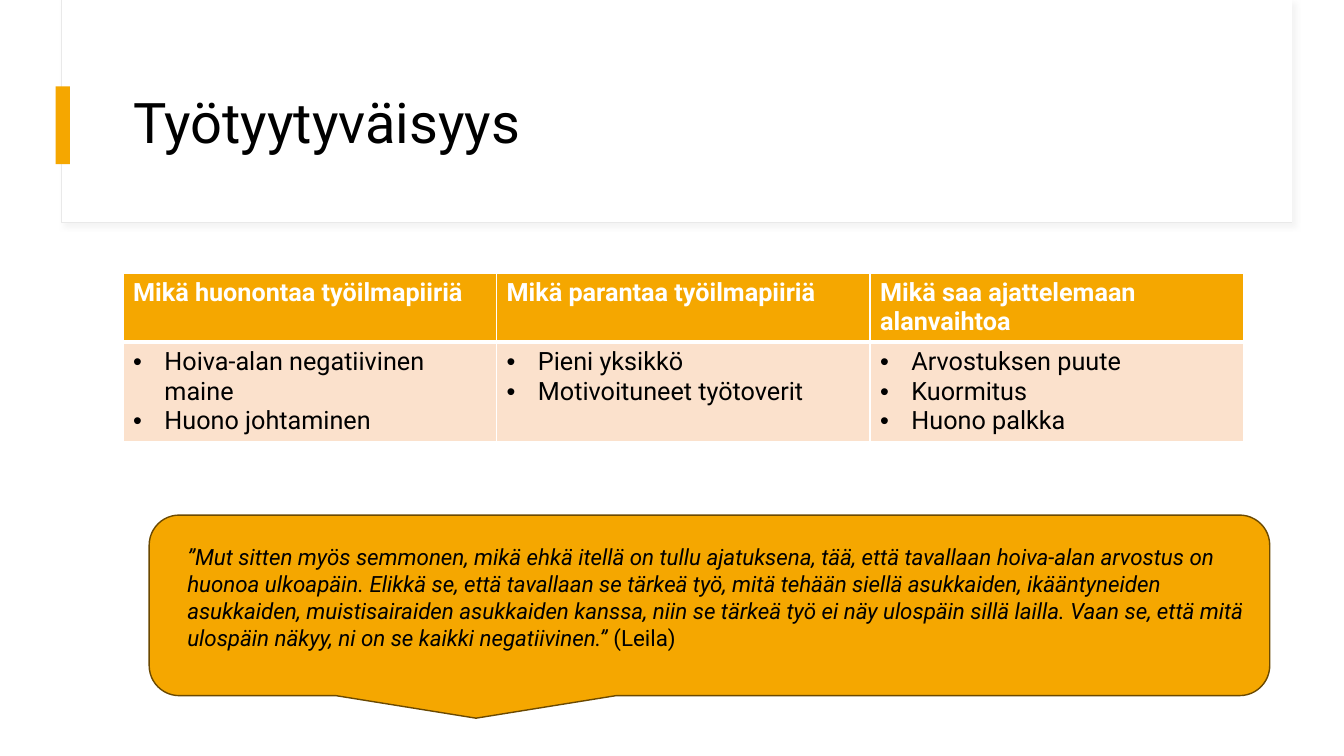
from lxml.etree import SubElement
from pptx import Presentation
from pptx.dml.color import RGBColor
from pptx.enum.shapes import MSO_SHAPE
from pptx.enum.text import MSO_ANCHOR, MSO_AUTO_SIZE, PP_ALIGN
from pptx.oxml import parse_xml
from pptx.oxml.ns import nsdecls, qn
from pptx.util import Cm, Pt

FONT = "Roboto"
WHITE = RGBColor(0xFF, 0xFF, 0xFF)
BLACK = RGBColor(0, 0, 0)
AMBER = RGBColor(0xF5, 0xA7, 0x00)
BROWN = RGBColor(0x6B, 0x49, 0x00)
PEACH = RGBColor(0xFB, 0xE1, 0xCC)
GREY = RGBColor(0xE9, 0xE9, 0xE9)

LEFT, WIDTH = Cm(3.1), Cm(28.24)
HEADS = [
    "Mikä huonontaa työilmapiiriä",
    "Mikä parantaa työilmapiiriä",
    "Mikä saa ajattelemaan alanvaihtoa",
]
LISTS = [
    ["Hoiva-alan negatiivinen maine", "Huono johtaminen"],
    ["Pieni yksikkö", "Motivoituneet työtoverit"],
    ["Arvostuksen puute", "Kuormitus", "Huono palkka"],
]
QUOTE = (
    "”Mut sitten myös semmonen, mikä ehkä itellä on tullu ajatuksena, tää, "
    "että tavallaan hoiva-alan arvostus on huonoa ulkoapäin. Elikkä se, että "
    "tavallaan se tärkeä työ, mitä tehään siellä asukkaiden, ikääntyneiden "
    "asukkaiden, muistisairaiden asukkaiden kanssa, niin se tärkeä työ ei näy "
    "ulospäin sillä lailla. Vaan se, että mitä ulospäin näkyy, ni on se kaikki "
    "negatiivinen.”"
)


def set_font(font, size, color, bold=False):
    font.name, font.size, font.bold = FONT, Pt(size), bold
    font.color.rgb = color


def add_box(slide, kind, area, fill, line=None, width=1):
    box = slide.shapes.add_shape(kind, *area)
    box.shadow.inherit = False
    box.fill.solid()
    box.fill.fore_color.rgb = fill
    if line is None:
        box.line.fill.background()
    else:
        box.line.color.rgb = line
        box.line.width = Pt(width)
    return box


def add_shadow(box):
    effects = box.element.spPr.find(qn("a:effectLst"))
    effects.append(parse_xml(
        f'<a:outerShdw {nsdecls("a")} blurRad="{Pt(4)}" dist="{Pt(3)}" '
        'dir="2700000" algn="tl" rotWithShape="0"><a:srgbClr val="D9D9D9">'
        '<a:alpha val="30000"/></a:srgbClr></a:outerShdw>'))


def add_frame(slide):
    """Draw the title panel with its amber marker."""
    rect = MSO_SHAPE.RECTANGLE
    panel = add_box(slide, rect, (Cm(1.55), 0, Cm(31.01), Cm(5.61)),
                    WHITE, GREY, 0.75)
    add_shadow(panel)
    add_box(slide, rect, (Cm(1.57), 0, Cm(30.99), Cm(5.59)), WHITE)
    add_box(slide, rect, (Cm(1.4), Cm(2.18), Cm(0.36), Cm(1.96)), AMBER)


def set_title(slide, text):
    title = slide.shapes.title
    title.left, title.top = LEFT, Cm(1.52)
    title.width, title.height = WIDTH, Cm(3.28)
    frame = title.text_frame
    frame.text = text
    frame.auto_size = MSO_AUTO_SIZE.NONE
    frame.vertical_anchor = MSO_ANCHOR.MIDDLE
    para = frame.paragraphs[0]
    para.alignment = PP_ALIGN.LEFT
    para.line_spacing = 0.9
    set_font(para.font, 40, BLACK)
    title.element.getparent().append(title.element)  # in front of the panel


def add_bullet(para):
    props = para._p.get_or_add_pPr()
    props.set("marL", str(Cm(0.79)))
    props.set("indent", str(-Cm(0.79)))
    SubElement(props, qn("a:buFont"), typeface="Arial")
    SubElement(props, qn("a:buChar"), char="•")


def set_edges(cell, top, bottom):
    """Give the cell white borders; side borders are 1 pt."""
    props = cell._tc.get_or_add_tcPr()
    edges = {"L": 1, "R": 1, "T": top, "B": bottom}
    for spot, (side, width) in enumerate(edges.items()):
        props.insert(spot, parse_xml(
            f'<a:ln{side} {nsdecls("a")} w="{Pt(width)}"><a:solidFill>'
            f'<a:srgbClr val="{WHITE}"/></a:solidFill></a:ln{side}>'))


def fill_cell(cell, lines, head):
    cell.fill.solid()
    cell.fill.fore_color.rgb = AMBER if head else PEACH
    set_edges(cell, *((1, 3) if head else (3, 1)))
    cell.text = "\n".join(lines)
    for para in cell.text_frame.paragraphs:
        if not head:
            add_bullet(para)
        set_font(para.font, 18, WHITE if head else BLACK, head)


def add_grid(slide):
    grid = slide.shapes.add_table(2, len(HEADS), LEFT, Cm(6.88),
                                  WIDTH, Cm(4.2)).table
    for row, height in zip(grid.rows, (1.71, 2.49)):
        row.height = Cm(height)
    for col, (head, items) in enumerate(zip(HEADS, LISTS)):
        fill_cell(grid.cell(0, col), [head], True)
        fill_cell(grid.cell(1, col), items, False)


def add_quote(slide):
    add_box(slide, MSO_SHAPE.ROUNDED_RECTANGULAR_CALLOUT,
            (Cm(3.76), Cm(12.98), WIDTH, Cm(4.55)), AMBER, BROWN)
    box = slide.shapes.add_textbox(Cm(4.47), Cm(13.56), Cm(27.18), Cm(3.76))
    box.text_frame.word_wrap = True
    para = box.text_frame.paragraphs[0]
    set_font(para.font, 16, BLACK)
    for text, slant in ((QUOTE, True), (" (Leila)", False)):
        run = para.add_run()
        run.text = text
        set_font(run.font, 16, BLACK)
        run.font.italic = slant


def main():
    deck = Presentation()
    deck.slide_width, deck.slide_height = Cm(33.87), Cm(19.05)
    slide = deck.slides.add_slide(deck.slide_layouts[5])
    add_frame(slide)
    set_title(slide, "Työtyytyväisyys")
    add_grid(slide)
    add_quote(slide)
    deck.save("out.pptx")


if __name__ == "__main__":
    main()
